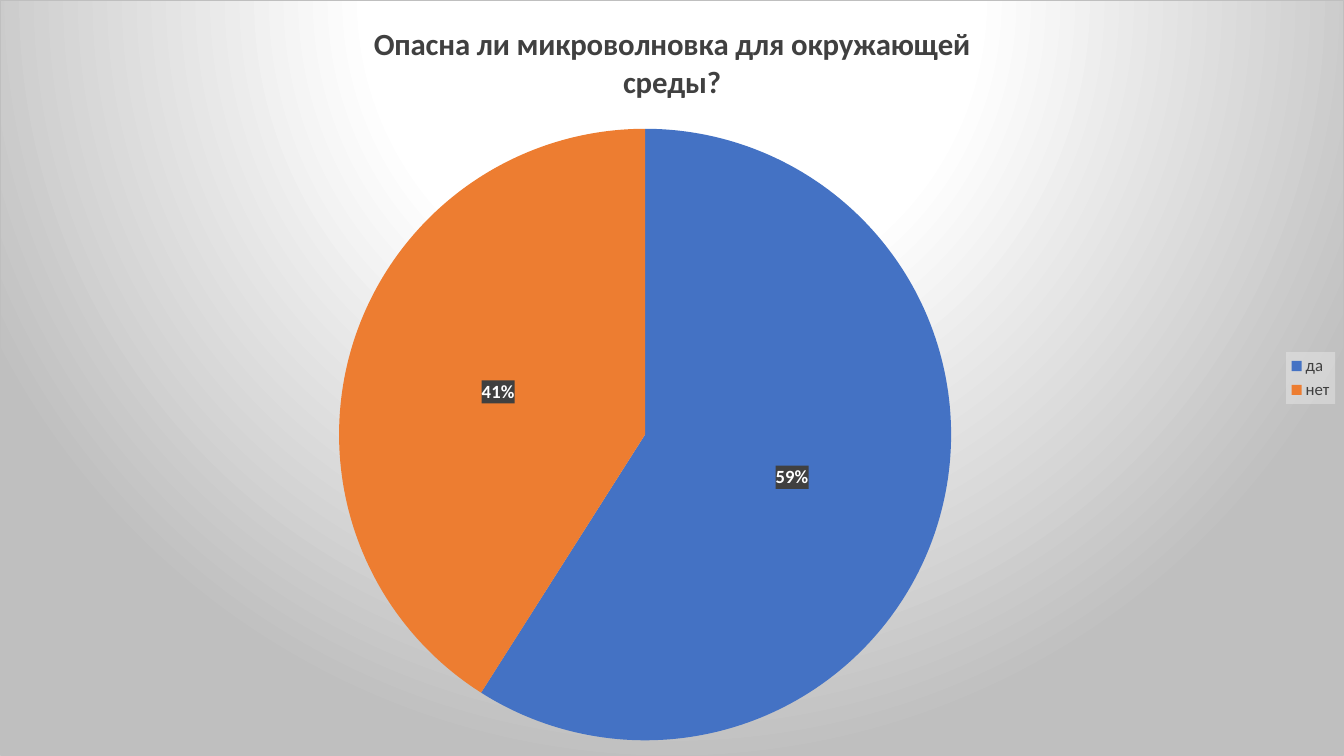
"""Build a slide with one pie chart of answers about microwave ovens."""
from dataclasses import dataclass

from pptx import Presentation
from pptx.chart.data import CategoryChartData
from pptx.dml.color import RGBColor as Rgb
from pptx.enum.chart import XL_CHART_TYPE as Kind
from pptx.enum.chart import XL_LABEL_POSITION as LabelPos
from pptx.enum.chart import XL_LEGEND_POSITION as LegendPos
from pptx.oxml import parse_xml
from pptx.oxml.ns import nsdecls, qn
from pptx.util import Inches, Pt

QUESTION = "Опасна ли микроволновка для окружающей\nсреды?"
ANSWERS = {"да": 59, "нет": 41}
WIDTH, HEIGHT = 13.33, 7.5
PIE_SHARES = {"x": 0.25, "y": 0.17, "w": 0.46, "h": 0.81}


@dataclass(frozen=True)
class Theme:
    font: str = "Calibri"
    ink: str = "404040"
    light: str = "FFFFFF"
    edge: str = "BFBFBF"
    legend: str = "F2F2F2"
    slices: tuple = ("4472C4", "ED7D31")
    title_size: float = 22
    legend_size: float = 12
    label_size: float = 13.3


THEME = Theme()


def style(font, size, color, bold=False):
    values = {"name": THEME.font, "size": Pt(size), "bold": bold}
    for key, value in values.items():
        setattr(font, key, value)
    font.color.rgb = Rgb.from_string(color)


def solid(color, alpha):
    return (f'<a:solidFill><a:srgbClr val="{color}"><a:alpha val="{alpha * 1000}"/>'
            '</a:srgbClr></a:solidFill>')


def backdrop(part, inner):
    part.find(qn("c:txPr")).addprevious(
        parse_xml(f'<c:spPr {nsdecls("c", "a")}>{inner}</c:spPr>'))


def radial():
    stops = "".join(
        f'<a:gs pos="{share * 1000}"><a:srgbClr val="{color}"/></a:gs>'
        for share, color in ((0, THEME.light), (39, THEME.light), (100, THEME.edge)))
    return (f'<a:gradFill><a:gsLst>{stops}</a:gsLst><a:path path="circle">'
            '<a:fillToRect l="50000" t="-80000" r="50000" b="180000"/></a:path></a:gradFill>'
            f'<a:ln w="{Pt(0.75)}">{solid(THEME.edge, 100)}</a:ln>')


def place_pie(plot_area):
    for old in plot_area.findall(qn("c:layout")):
        plot_area.remove(old)
    modes = '<c:layoutTarget val="inner"/><c:xMode val="edge"/><c:yMode val="edge"/>'
    shares = "".join(f'<c:{key} val="{share}"/>' for key, share in PIE_SHARES.items())
    plot_area.insert(0, parse_xml(
        f'<c:layout {nsdecls("c")}><c:manualLayout>{modes}{shares}</c:manualLayout></c:layout>'))


def main():
    deck = Presentation()
    deck.slide_width, deck.slide_height = Inches(WIDTH), Inches(HEIGHT)
    slide = deck.slides.add_slide(deck.slide_layouts[6])

    answers = CategoryChartData()
    answers.categories = list(ANSWERS)
    answers.add_series(QUESTION, list(ANSWERS.values()))
    chart = slide.shapes.add_chart(
        Kind.PIE, 0, 0, deck.slide_width, deck.slide_height, answers).chart
    style(chart.font, 10, "000000")
    backdrop(chart.element, radial())
    place_pie(chart.element.chart.plotArea)

    title = chart.chart_title
    title.include_in_layout = False
    title.text_frame.text = QUESTION
    for line in title.text_frame.paragraphs:
        style(line.runs[0].font, THEME.title_size, THEME.ink, True)

    chart.has_legend = True
    legend = chart.legend
    legend.position, legend.include_in_layout = LegendPos.RIGHT, False
    style(legend.font, THEME.legend_size, THEME.ink)
    backdrop(legend.font and chart.element.chart.find(qn("c:legend")), solid(THEME.legend, 39))

    pie = chart.plots[0]
    pie.vary_by_categories = True
    series = pie.series[0]
    for index, color in enumerate(THEME.slices):
        fill = series.points[index].format.fill
        fill.solid()
        fill.fore_color.rgb = Rgb.from_string(color)

    labels = series.data_labels
    formats = {"show_percentage": True, "show_value": False, "number_format": "0%",
               "number_format_is_linked": False, "position": LabelPos.CENTER}
    for key, value in formats.items():
        setattr(labels, key, value)
    style(labels.font, THEME.label_size, THEME.light, True)
    backdrop(next(chart.element.iter(qn("c:ser"))).find(qn("c:dLbls")), solid(THEME.ink, 90))

    deck.save("out.pptx")


if __name__ == "__main__":
    main()
